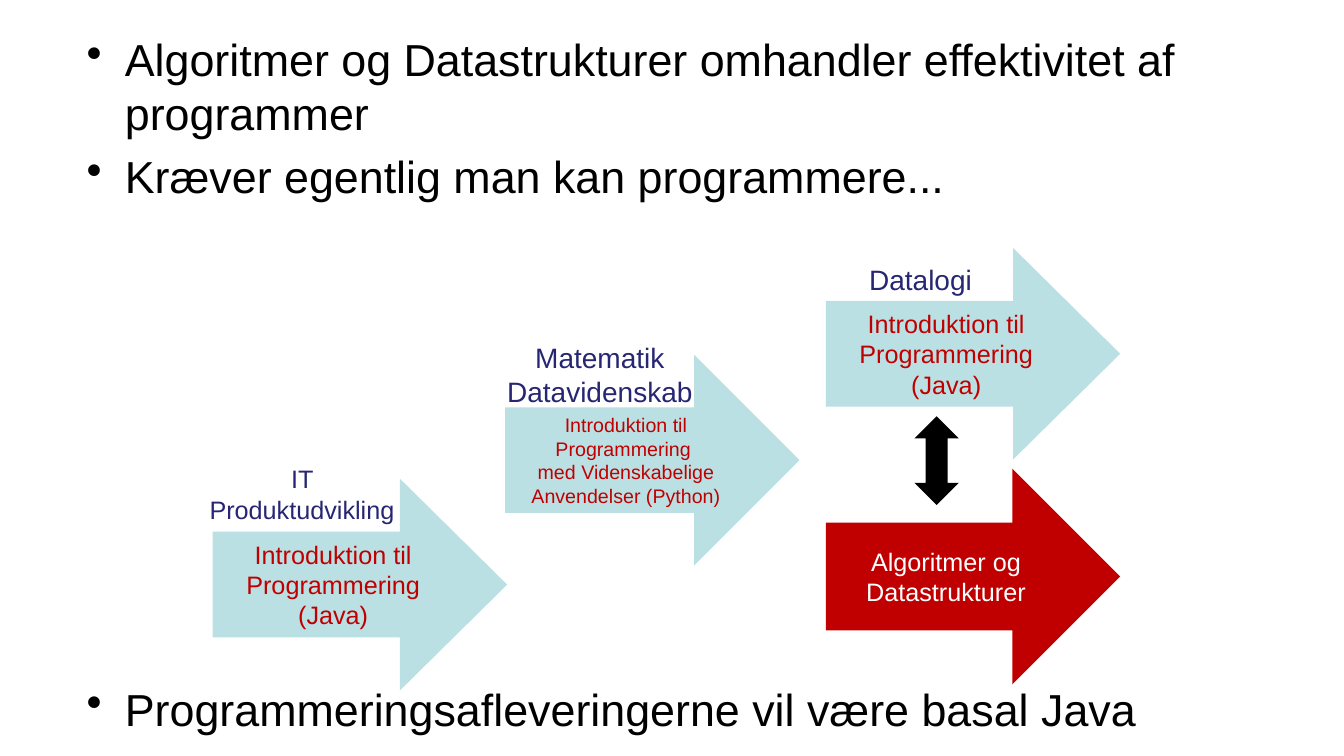
from pptx import Presentation
from pptx.dml.color import RGBColor
from pptx.enum.shapes import MSO_SHAPE
from pptx.enum.text import MSO_ANCHOR, PP_ALIGN
from pptx.oxml.ns import qn
from pptx.util import Inches, Pt
from lxml.etree import SubElement

BLACK, WHITE, RED, PALE_BLUE, NAVY = "000000", "FFFFFF", "C00000", "BBE0E3", "262673"
ARROW_WIDTH = 2.92
JAVA_COURSE = "Introduktion til Programmering (Java)"
PYTHON_COURSE = "Introduktion til Programmering \nmed Videnskabelige Anvendelser (Python)"


def color(value):
    return RGBColor.from_string(value)


class SlideBuilder:
    font_name = "Arial"
    bullet_size = 32
    bullet_indent = Inches(0.38)

    def __init__(self, slide):
        self.slide = slide

    def style(self, paragraph, size, font_color):
        paragraph.font.name = self.font_name
        paragraph.font.size = Pt(size)
        paragraph.font.color.rgb = color(font_color)

    def text_frame(self, left, top, width, height):
        """Add a wrapping text box and return its text frame."""
        box = self.slide.shapes.add_textbox(
            Inches(left), Inches(top), Inches(width), Inches(height))
        box.text_frame.word_wrap = True
        return box.text_frame

    def bullets(self, left, top, width, height, items):
        frame = self.text_frame(left, top, width, height)
        for index, item in enumerate(items):
            paragraph = frame.add_paragraph() if index else frame.paragraphs[0]
            paragraph.text = item
            paragraph.space_before = Pt(0.2 * self.bullet_size if index else 0)
            self.style(paragraph, self.bullet_size, BLACK)
            properties = paragraph._p.get_or_add_pPr()
            properties.set("marL", str(self.bullet_indent))
            properties.set("indent", str(-self.bullet_indent))
            bullet = SubElement(properties, qn("a:buChar"))
            bullet.set("char", "•")
            properties.insert_element_before(bullet, "a:tabLst", "a:defRPr", "a:extLst")

    def label(self, left, top, width, height, text, size):
        paragraph = self.text_frame(left, top, width, height).paragraphs[0]
        paragraph.text = text
        paragraph.alignment = PP_ALIGN.CENTER
        self.style(paragraph, size, NAVY)

    def shape(self, kind, left, top, width, height, fill):
        shape = self.slide.shapes.add_shape(
            kind, Inches(left), Inches(top), Inches(width), Inches(height))
        shape.shadow.inherit = False
        shape.fill.solid()
        shape.fill.fore_color.rgb = color(fill)
        shape.line.fill.background()
        return shape

    def course_arrow(self, left, top, height, text, size=18, fill=PALE_BLUE,
                     font_color=RED, head=0.5):
        arrow = self.shape(MSO_SHAPE.RIGHT_ARROW, left, top, ARROW_WIDTH, height, fill)
        arrow.adjustments[1] = head
        frame = arrow.text_frame
        frame.word_wrap = True
        frame.vertical_anchor = MSO_ANCHOR.MIDDLE
        paragraph = frame.paragraphs[0]
        paragraph.text = text
        paragraph.alignment = PP_ALIGN.CENTER
        self.style(paragraph, size, font_color)


def main():
    presentation = Presentation()
    presentation.slide_width = Inches(13.33)
    presentation.slide_height = Inches(7.5)
    builder = SlideBuilder(presentation.slides.add_slide(presentation.slide_layouts[6]))

    builder.bullets(0.76, 0.27, 12.15, 1.93, [
        "Algoritmer og Datastrukturer omhandler effektivitet af programmer",
        "Kræver egentlig man kan programmere...",
    ])
    builder.bullets(0.76, 6.71, 12.15, 0.62, [
        "Programmeringsafleveringerne vil være basal Java",
    ])

    builder.course_arrow(8.19, 4.65, 2.14, "Algoritmer og Datastrukturer",
                         fill=RED, font_color=WHITE)
    builder.course_arrow(8.19, 2.46, 2.1, JAVA_COURSE, head=0.506)
    builder.course_arrow(5.01, 3.52, 2.09, PYTHON_COURSE, size=14)
    builder.course_arrow(2.11, 4.75, 2.1, JAVA_COURSE, head=0.506)

    builder.label(8.19, 2.56, 1.88, 0.44, "Datalogi", 20)
    builder.label(1.85, 4.55, 2.29, 0.71, "IT Produktudvikling", 18)
    builder.label(4.92, 3.33, 2.06, 0.77, "Matematik\nDatavidenskab", 20)
    builder.shape(MSO_SHAPE.UP_DOWN_ARROW, 9.07, 4.13, 0.44, 0.88, BLACK)

    presentation.save("out.pptx")


if __name__ == "__main__":
    main()
